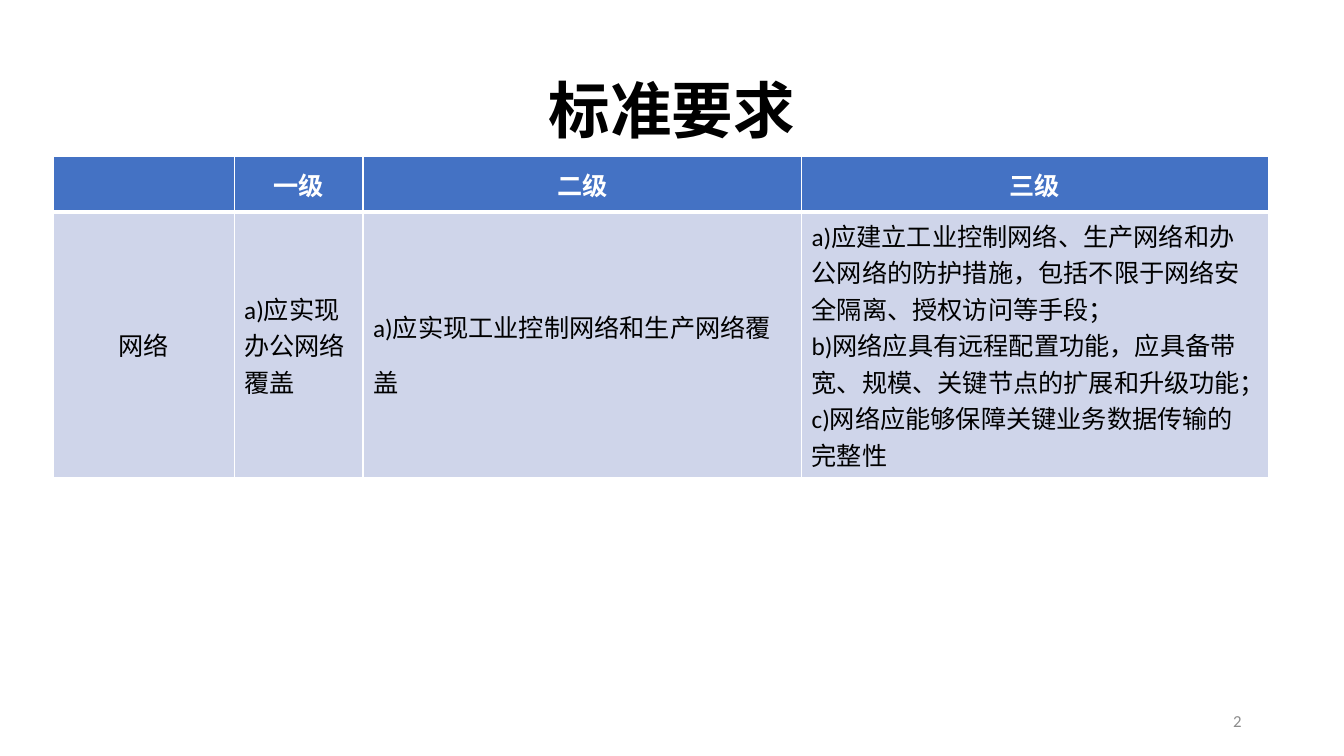
from lxml import etree
from pptx import Presentation
from pptx.dml.color import RGBColor
from pptx.enum.text import MSO_ANCHOR, MSO_AUTO_SIZE, PP_ALIGN
from pptx.oxml.ns import qn
from pptx.util import Cm, Pt

LEFT, CENTER, RIGHT = PP_ALIGN.LEFT, PP_ALIGN.CENTER, PP_ALIGN.RIGHT
MIDDLE = MSO_ANCHOR.MIDDLE
FIXED = MSO_AUTO_SIZE.NONE

BLACK = RGBColor(0x00, 0x00, 0x00)
WHITE = RGBColor(0xFF, 0xFF, 0xFF)
GRAY = RGBColor(0x8C, 0x8C, 0x8C)
BLUE = RGBColor(0x44, 0x72, 0xC4)
PALE = RGBColor(0xCF, 0xD5, 0xEA)

HEADS = ["", "一级", "二级", "三级"]
NEEDS = [
    "网络",
    "a)应实现办公网络覆盖",
    "a)应实现工业控制网络和生产网络覆盖",
    "a)应建立工业控制网络、生产网络和办公网络的防护措施，包括不限于网络安全隔离、授权访问等手段；\n"
    "b)网络应具有远程配置功能，应具备带宽、规模、关键节点的扩展和升级功能；\n"
    "c)网络应能够保障关键业务数据传输的完整性",
]
WIDTHS = [4.55, 3.25, 11.05, 11.76]
HEIGHTS = [1.4, 6.4]


class Deck:
    font = "Calibri"

    def __init__(self):
        self.prs = Presentation()
        self.prs.slide_width, self.prs.slide_height = Cm(33.87), Cm(19.05)
        self.slide = self.prs.slides.add_slide(self.prs.slide_layouts[5])

    def label(self, frame, text, align, color, space=1.0, **look):
        frame.text = text
        frame.word_wrap = True
        for para in frame.paragraphs:
            para.alignment, para.line_spacing = align, space
            for name, value in {"name": self.font, **look}.items():
                setattr(para.font, name, value)
            para.font.color.rgb = color

    def place(self, shape, box):
        for name, value in zip(("left", "top", "width", "height"), box):
            setattr(shape, name, Cm(value))
        shape.text_frame.auto_size = FIXED
        shape.text_frame.vertical_anchor = MIDDLE

    def title(self, text, box):
        shape = self.slide.shapes.title
        self.place(shape, box)
        self.label(shape.text_frame, text, CENTER, BLACK, 0.9,
                   size=Pt(44), bold=True)

    def number(self, text, box):
        shape = self.slide.shapes.add_textbox(0, 0, 0, 0)
        self.place(shape, box)
        self.label(shape.text_frame, text, RIGHT, GRAY, size=Pt(12))

    def edge(self, cell, widths):
        """Draw white borders, with one width in points for each side."""
        props = cell._tc.get_or_add_tcPr()
        for side, width in widths.items():
            line = etree.SubElement(props, qn(f"a:ln{side}"), w=str(Pt(width)))
            fill = etree.SubElement(line, qn("a:solidFill"))
            etree.SubElement(fill, qn("a:srgbClr"), val=str(WHITE))

    def table(self, rows, left, top):
        grid = self.slide.shapes.add_table(
            len(rows), len(WIDTHS), Cm(left), Cm(top),
            Cm(sum(WIDTHS)), Cm(sum(HEIGHTS))).table
        for col, width in zip(grid.columns, WIDTHS):
            col.width = Cm(width)
        for i, row in enumerate(rows):
            grid.rows[i].height = Cm(HEIGHTS[i])
            head = i == 0
            for j, text in enumerate(row):
                cell = grid.cell(i, j)
                self.edge(cell, {"L": 1, "R": 1, "T": 1 if head else 3,
                                 "B": 3 if head else 1})
                cell.fill.solid()
                cell.fill.fore_color.rgb = BLUE if head else PALE
                cell.vertical_anchor = MIDDLE
                self.label(cell.text_frame, text,
                           CENTER if head or j == 0 else LEFT,
                           WHITE if head else BLACK,
                           1.5 if not head and j == 2 else 1.0,
                           size=Pt(18), bold=head)


def main():
    deck = Deck()
    deck.title("标准要求", (2.33, 1.01, 29.21, 3.68))
    deck.number("2", (23.92, 17.66, 7.62, 1.01))
    deck.table([HEADS, NEEDS], 1.35, 3.94)
    deck.prs.save("out.pptx")


if __name__ == "__main__":
    main()
